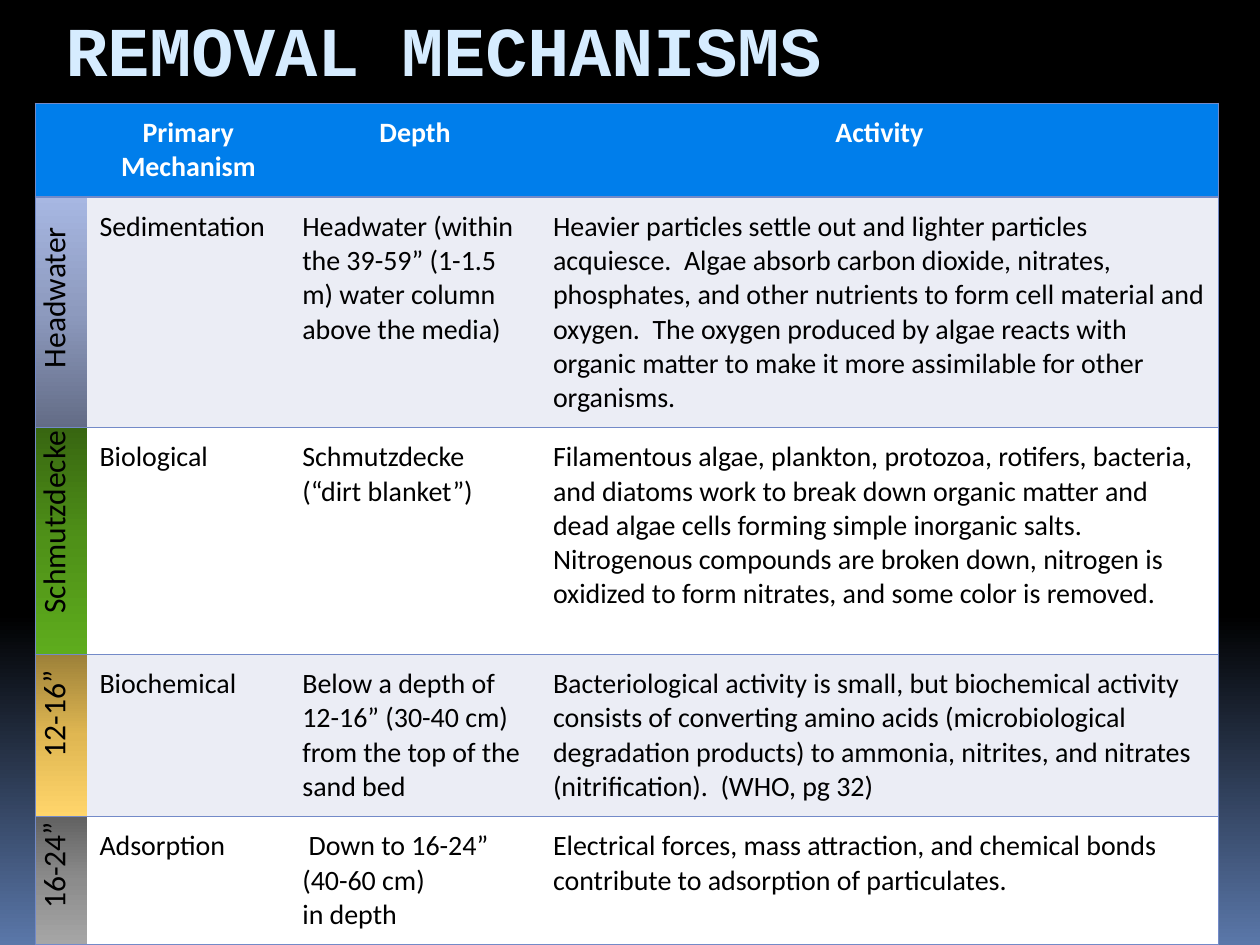
"""Build a slide with a table of filter removal mechanisms."""
from copy import deepcopy
from dataclasses import dataclass

from lxml import etree
from pptx import Presentation
from pptx.dml.color import RGBColor
from pptx.enum.text import MSO_ANCHOR, MSO_AUTO_SIZE, PP_ALIGN
from pptx.oxml.ns import qn
from pptx.util import Inches, Pt

TOP = MSO_ANCHOR.TOP
NO_FIT = MSO_AUTO_SIZE.NONE
LEFT, CENTER = PP_ALIGN.LEFT, PP_ALIGN.CENTER
PLAIN = "{2D5ABB26-0587-4C30-8999-92F81FD0307C}"
EDGE = "738AC8"
BANDS = ("EBEDF5", "FFFFFF")
HEADS = ("", "Primary Mechanism", "Depth", "Activity")
COLS = (0.41, 1.61, 1.99, 5.38)


@dataclass
class Zone:
    label: str
    start: float
    high: float
    shades: tuple[str, str, str]
    texts: tuple[str, str, str]
    angle: int = 270


ZONES = (
    Zone("Headwater", 4.48, 1.8, ("636C86", "8D9ABE", "A7B7E2"), (
        "Sedimentation",
        "Headwater (within the 39-59” (1-1.5 m) water column above the media)",
        "Heavier particles settle out and lighter particles acquiesce.  "
        "Algae absorb carbon dioxide, nitrates, phosphates, and other "
        "nutrients to form cell material and oxygen.  The oxygen produced by "
        "algae reacts with organic matter to make it more assimilable for "
        "other organisms."), 90),
    Zone("Schmutzdecke", 2.53, 1.8, ("386611", "4F9118", "5EAC1D"), (
        "Biological",
        "Schmutzdecke\n(“dirt blanket”)",
        "Filamentous algae, plankton, protozoa, rotifers, bacteria, and "
        "diatoms work to break down organic matter and dead algae cells "
        "forming simple inorganic salts.  Nitrogenous compounds are broken "
        "down, nitrogen is oxidized to form nitrates, and some color is "
        "removed.")),
    Zone("12-16”", 1.39, 1.27, ("9D8139", "E0B752", "FFD56B"), (
        "Biochemical",
        "Below a depth of 12-16” (30-40 cm)  from the top of the sand bed",
        "Bacteriological activity is small, but biochemical activity "
        "consists of converting amino acids (microbiological degradation "
        "products) to ammonia, nitrites, and nitrates (nitrification).  "
        "(WHO, pg 32)")),
    Zone("16-24”", 0.19, 1, ("626262", "8C8C8C", "A6A6A6"), (
        "Adsorption",
        " Down to 16-24”\n(40-60 cm)\nin depth",
        "Electrical forces, mass attraction, and chemical bonds contribute "
        "to adsorption of particulates.")),
)


def tint(code: str) -> RGBColor:
    return RGBColor.from_string(code)


def blend(fill, root, shades, angle=270, mid=0.5) -> None:
    fill.gradient()
    fill.gradient_angle = angle
    stops = root.find(".//" + qn("a:gsLst"))
    stops.append(deepcopy(stops[-1]))
    for stop, code, spot in zip(fill.gradient_stops, shades, (0, mid, 1)):
        stop.color.rgb = tint(code)
        stop.position = spot


def style(frame, name: str, size: int, code: str, bold=False, align=LEFT) -> None:
    for para in frame.paragraphs:
        para.alignment = align
        font = para.font
        font.name, font.size, font.bold = name, Pt(size), bold
        font.color.rgb = tint(code)


def rule(cell, sides: str) -> None:
    props = cell._tc.get_or_add_tcPr()
    for spot, side in enumerate(sides):
        line = etree.Element(qn("a:ln" + side), w=str(Pt(1)))
        solid = etree.SubElement(line, qn("a:solidFill"))
        etree.SubElement(solid, qn("a:srgbClr"), val=EDGE)
        props.insert(spot, line)


def write(cell, text: str, back: str, code="000000", head=False) -> None:
    cell.text = text
    cell.margin_left = cell.margin_right = Inches(0.1)
    cell.margin_top = cell.margin_bottom = Inches(0.1)
    cell.fill.solid()
    cell.fill.fore_color.rgb = tint(back)
    style(cell.text_frame, "Calibri", 16, code, head, CENTER if head else LEFT)


def add_grid(slide) -> None:
    highs = [0.73] + [zone.high for zone in ZONES]
    frame = slide.shapes.add_table(
        len(highs), len(COLS), Inches(0.28), Inches(0.82),
        Inches(sum(COLS)), Inches(sum(highs)))
    grid = frame.table
    grid.first_row = grid.horz_banding = False
    grid._tbl.tblPr.find(qn("a:tableStyleId")).text = PLAIN
    for col, wide in zip(grid.columns, COLS):
        col.width = Inches(wide)
    for row, high in zip(grid.rows, highs):
        row.height = Inches(high)
    for col, text in enumerate(HEADS):
        write(grid.cell(0, col), text, "007EEB", "FFFFFF", True)
    for row, zone in enumerate(ZONES, 1):
        side = grid.cell(row, 0)
        blend(side.fill, side._tc, zone.shades, zone.angle)
        for col, text in enumerate(zone.texts, 1):
            write(grid.cell(row, col), text, BANDS[(row - 1) % 2])
    for row in grid.rows:
        first, *inner, last = row.cells
        rule(first, "LTB")
        rule(last, "RTB")
        for cell in inner:
            rule(cell, "TB")


def add_title(slide) -> None:
    title = slide.shapes.title
    title.left, title.top = Inches(0.42), Inches(0)
    title.width, title.height = Inches(9.2), Inches(0.77)
    frame = title.text_frame
    frame.text = "REMOVAL MECHANISMS"
    frame.vertical_anchor, frame.auto_size = TOP, NO_FIT
    style(frame, "Courier New", 40, "D6ECFF", True)


def add_labels(slide) -> None:
    box = slide.shapes.add_textbox(
        Inches(0.22), Inches(1.1), Inches(0.5), Inches(6.4))
    frame = box.text_frame
    frame.word_wrap = True
    frame._txBody.bodyPr.set("vert", "vert270")
    order = ZONES[::-1]
    frame.text = "".join("\t" + zone.label for zone in order)
    style(frame, "Calibri", 18, "000000")
    tabs = etree.Element(qn("a:tabLst"))
    for zone in order:
        etree.SubElement(tabs, qn("a:tab"),
                         pos=str(Inches(zone.start)), algn="l")
    frame.paragraphs[0]._p.get_or_add_pPr().insert(0, tabs)


def main() -> None:
    deck = Presentation()
    deck.slide_width, deck.slide_height = Inches(10), Inches(7.5)
    slide = deck.slides.add_slide(deck.slide_layouts[5])
    blend(slide.background.fill, slide.element,
          ("000000", "000000", "5A77A9"), mid=0.65)
    add_grid(slide)
    add_title(slide)
    add_labels(slide)
    deck.save("out.pptx")


if __name__ == "__main__":
    main()
